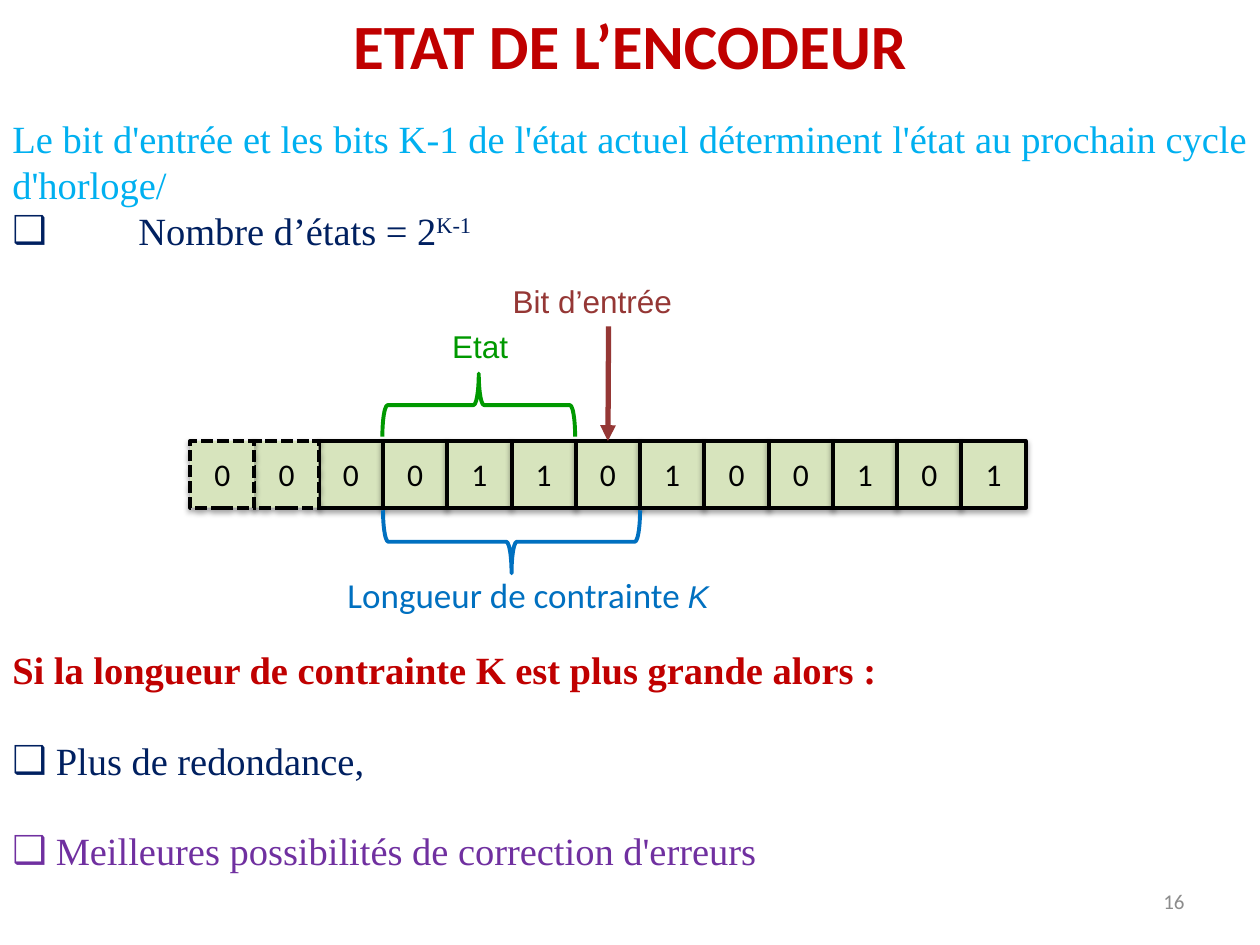
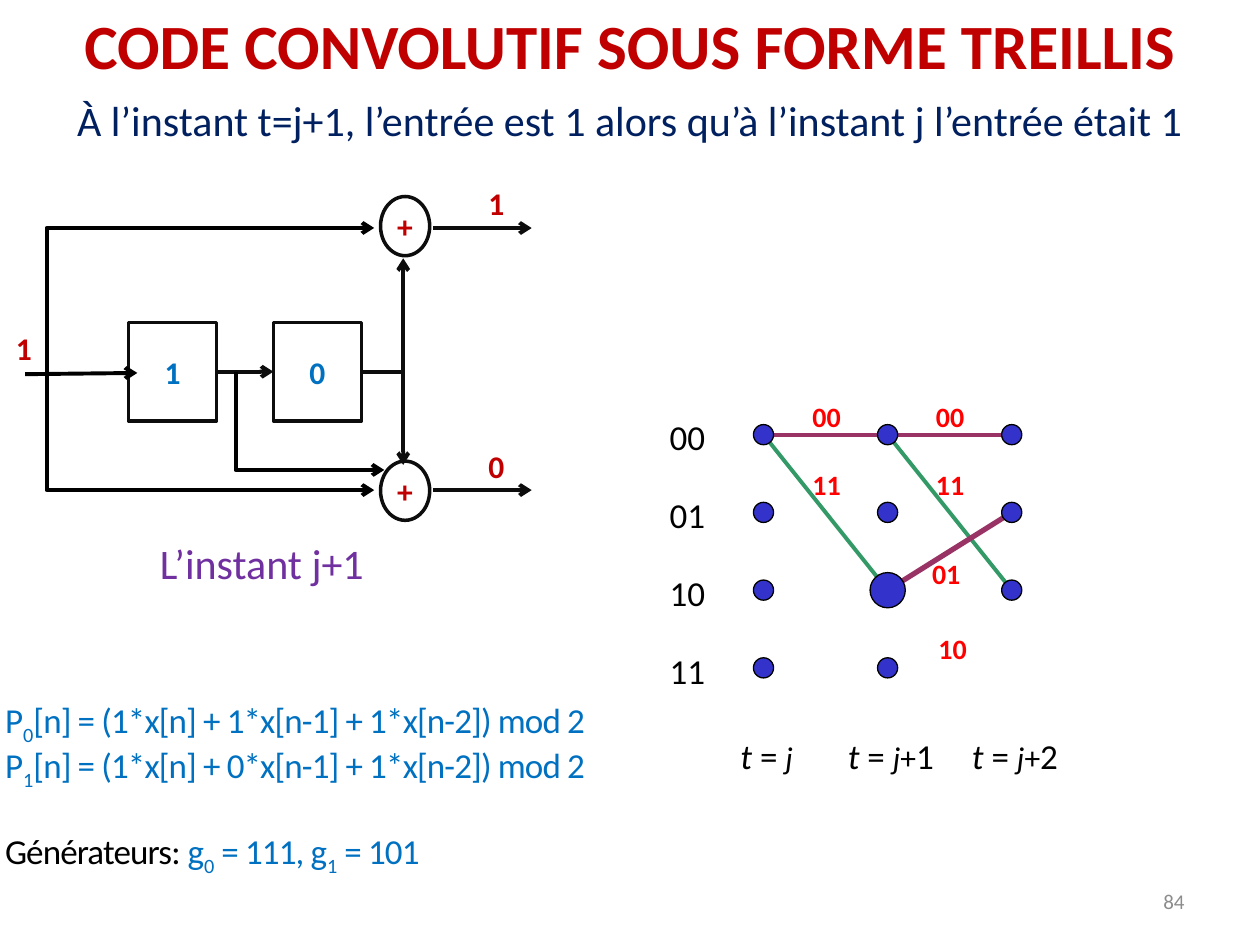
from lxml import etree
from pptx import Presentation
from pptx import util as u
from pptx.dml.color import RGBColor
from pptx.enum import dml, shapes, text
from pptx.oxml.ns import qn

COLUMNS, ROWS, UNIT = 100, 75, 0.1
RED, NAVY, BLUE, PURPLE = "C00000", "002060", "0070C0", "7030A0"
GREEN, BROWN, BLACK, INK = "009900", "953735", "000000", "0D0D0D"
PLUM, LEAF, DOT, TAG = "993366", "339966", "3333CC", "FF0000"

CALIBRI = {"name": "Calibri", "size": u.Pt(18), "color": BLACK}
ARIAL = {**CALIBRI, "name": "Arial"}
TIMES = {"name": "Times New Roman", "size": u.Pt(22), "color": NAVY}
LARGE = {**CALIBRI, "size": u.Pt(20)}
HEADING = {**CALIBRI, "size": u.Pt(24)}
STRONG = {**CALIBRI, "color": RED, "bold": True}
ITALIC = {"italic": True}
SMALL_ITALIC = {"italic": True, "size": u.Pt(18)}
SUBSCRIPT = {"baseline": "-25000"}

CENTER = {"alignment": text.PP_ALIGN.CENTER}
RIGHT = {"alignment": text.PP_ALIGN.RIGHT}
JUSTIFY = {"alignment": text.PP_ALIGN.JUSTIFY}
TIGHT = {f"margin_{side}": 0 for side in ("left", "right", "top", "bottom")}
MIDDLE = {"vertical_anchor": text.MSO_ANCHOR.MIDDLE}
UNWRAPPED = {"word_wrap": False}


def color(value):
    return RGBColor.from_string(value)


def grid(*lengths):
    return [u.Inches(length * UNIT) for length in lengths]


def assign(target, values):
    for name, value in values.items():
        setattr(target, name, value)


class Deck:
    def __init__(self):
        self.presentation = Presentation()
        self.presentation.slide_width, self.presentation.slide_height = grid(COLUMNS, ROWS)
        self.slide = None

    def start(self, title, number):
        self.slide = self.presentation.slides.add_slide(self.presentation.slide_layouts[6])
        self.text((0, 0, COLUMNS, 7.1), [([title], CENTER)], {**STRONG, "size": u.Pt(36)})
        self.text((71.7, 69.5, 23.3, 4), [([number], RIGHT)],
                  {**CALIBRI, "size": u.Pt(12), "color": "8C8C8C"}, MIDDLE)

    def style_run(self, run, style):
        for name, value in style.items():
            if name == "color":
                run.font.color.rgb = color(value)
            elif name in ("baseline", "spc"):
                run._r.get_or_add_rPr().set(name, value)
            else:
                setattr(run.font, name, value)

    def bullet(self, paragraph, indent):
        properties = paragraph._p.get_or_add_pPr()
        hang = u.Inches(indent * UNIT)
        properties.set("marL", str(hang))
        properties.set("indent", str(-hang))
        etree.SubElement(properties, qn("a:buFont"), typeface="Arial")
        etree.SubElement(properties, qn("a:buChar"), char="❑")

    def fill_frame(self, frame, paragraphs, style, frame_format):
        assign(frame, {"word_wrap": True, **frame_format})
        for index, (pieces, layout) in enumerate(paragraphs):
            paragraph = frame.paragraphs[0] if index == 0 else frame.add_paragraph()
            layout = dict(layout)
            indent = layout.pop("bullet", None)
            assign(paragraph, layout)
            if indent is not None:
                self.bullet(paragraph, indent)
            for piece in pieces:
                words, extra = (piece, {}) if isinstance(piece, str) else piece
                run = paragraph.add_run()
                run.text = words
                self.style_run(run, {**style, **extra})

    def text(self, place, paragraphs, style, frame_format=None):
        box = self.slide.shapes.add_textbox(*grid(*place))
        self.fill_frame(box.text_frame, paragraphs, style, frame_format or {})

    def label(self, place, pieces, style):
        self.text(place, [(pieces, CENTER)], style, TIGHT)

    def shape(self, kind, place, line, weight, fill=None, words=None, style=CALIBRI,
              dash=None, rotation=0, shadow=False):
        shape = self.slide.shapes.add_shape(kind, *grid(*place))
        shape.shadow.inherit = False
        shape.rotation = rotation
        if fill:
            shape.fill.solid()
            shape.fill.fore_color.rgb = color(fill)
        else:
            shape.fill.background()
        shape.line.color.rgb = color(line)
        assign(shape.line, {"width": u.Pt(weight), "dash_style": dash})
        if shadow:
            self.drop_shadow(shape)
        if words:
            self.fill_frame(shape.text_frame, [([words], CENTER)], style,
                            {**TIGHT, **MIDDLE, **UNWRAPPED})
        return shape

    def drop_shadow(self, shape):
        effects = shape._element.spPr.find(qn("a:effectLst"))
        outer = etree.SubElement(effects, qn("a:outerShdw"), blurRad="40000",
                                 dist="23000", dir="5400000", rotWithShape="0")
        tint = etree.SubElement(outer, qn("a:srgbClr"), val=BLACK)
        etree.SubElement(tint, qn("a:alpha"), val="35000")

    def line(self, start, end, line, weight=2.25, head=None, elbow=False,
             begin_at=None, end_at=None):
        kind = shapes.MSO_CONNECTOR.ELBOW if elbow else shapes.MSO_CONNECTOR.STRAIGHT
        connector = self.slide.shapes.add_connector(kind, *grid(*start, *end))
        if begin_at:
            connector.begin_connect(*begin_at)
        if end_at:
            connector.end_connect(*end_at)
        connector.line.color.rgb = color(line)
        connector.line.width = u.Pt(weight)
        properties = connector._element.spPr
        if head:
            etree.SubElement(properties.find(qn("a:ln")), qn("a:tailEnd"), type=head)
        if elbow:
            guides = properties.find(qn("a:prstGeom")).find(qn("a:avLst"))
            etree.SubElement(guides, qn("a:gd"), name="adj1", fmla="val 0")
        etree.SubElement(properties, qn("a:effectLst"))


def encoder_state(deck):
    deck.start("ETAT DE L’ENCODEUR", "16")
    deck.text((0, 8.6, COLUMNS, 12.1), [
        ([("Le bit d'entrée et les bits K-1 de l'état actuel déterminent "
           "l'état au prochain cycle d'horloge/", {"color": "00B0F0"})], JUSTIFY),
        (["Nombre d’états = 2", ("K-1", {"baseline": "30000"})], {**JUSTIFY, "bullet": 10}),
    ], TIMES)

    bits, left, top, width, height = "0000110100101", 15.1, 35, 5.1, 5.3
    padding = (1, 0)
    cells = {}
    for index in (*range(len(padding), len(bits)), *padding):
        cells[index] = deck.shape(
            shapes.MSO_SHAPE.RECTANGLE, (left + index * width, top, width, height),
            BLACK, 2.25, "D7E4BD", bits[index], shadow=True,
            dash=dml.MSO_LINE.SQUARE_DOT if index in padding else None)

    brace = shapes.MSO_SHAPE.RIGHT_BRACE
    deck.shape(brace, (35.5, 24.5, 5, 3 * width), GREEN, 2.25, rotation=270)
    deck.shape(brace, (38.1, 32.8, 5, 4 * width), BLUE, 2.25, rotation=90)
    deck.text((34.9, 25.5, 6.5, 4), [(["Etat"], {})], {**ARIAL, "color": GREEN}, UNWRAPPED)
    deck.text((26.6, 45, 31, 4.4),
              [(["Longueur de contrainte ", ("K", {**SMALL_ITALIC, "name": "Arial"})], {})],
              {**LARGE, "color": BLUE}, UNWRAPPED)
    deck.line((48.3, 25.9), (48.3, top), BROWN, 3, "triangle", end_at=(cells[6], 0))
    deck.text((39.7, 21.9, 17.2, 4), [(["Bit d’entrée"], {})], {**ARIAL, "color": BROWN})

    item = {"bullet": 3.45, "space_before": u.Pt(25.3)}
    deck.text((0, 50.8, COLUMNS, 19.5), [
        ([("Si la longueur de contrainte K est plus grande alors :",
           {"color": RED, "bold": True})], {}),
        (["Plus de redondance,"], item),
        ([("Meilleures possibilités de correction d'erreurs", {"color": PURPLE})], item),
    ], TIMES)


def trellis(deck):
    columns = [60.6 + 9.85 * step for step in range(3)]
    rows = [34.5 + 6.17 * step for step in range(4)]
    edges = [
        ((1, 0), (2, 2), LEAF, 2.25), ((1, 0), (2, 0), PLUM, 2.25),
        ((0, 0), (1, 2), LEAF, 2.25), ((0, 0), (1, 0), PLUM, 2.25),
        ((1, 2), (2, 1), PLUM, 3),
    ]
    for start, end, tint, weight in edges:
        deck.line(*((columns[column], rows[row]) for column, row in (start, end)), tint, weight)
    tags = [("11", 74, 37.1), ("00", 74, 31.7), ("11", 64.2, 37.1), ("00", 64.2, 31.7),
            ("01", 73.7, 44.2), ("10", 74.2, 50.1)]
    for words, left, top in tags:
        deck.label((left, top, 2.8, 2.7), [words], {**STRONG, "size": u.Pt(16), "color": TAG})

    current, missing = (1, 2), (2, 3)
    for column, x in enumerate(columns):
        for row, y in enumerate(rows):
            if (column, row) != missing:
                size = 2.8 if (column, row) == current else 1.6
                deck.shape(shapes.MSO_SHAPE.OVAL, (x - size / 2, y - size / 2, size, size),
                           BLACK, 0.75, DOT)
    for state, y in zip(("00", "01", "10", "11"), rows):
        deck.label((52.8, y - 1.5, 3.5, 3.3), [state], LARGE)
    for step, x in enumerate(columns):
        later = [("+", {"size": u.Pt(18)}), str(step)] if step else []
        deck.label((x - 3.5, 58.3, 7.5, 3.3),
                   [("t", ITALIC), " = ", ("j", SMALL_ITALIC), *later], LARGE)


def circuit(deck):
    value = {**STRONG, "color": BLUE}
    first, second = (
        deck.shape(shapes.MSO_SHAPE.RECTANGLE, (left, 25.6, 7, 7.8), INK, 2,
                   words=bit, style=value)
        for left, bit in ((10.2, "1"), (21.7, "0")))
    axis, fork, tap = 29.5, 32, 18.7
    adders = [(15.6, 18.1), (36.6, 38.9)]
    for top, output in adders:
        deck.shape(shapes.MSO_SHAPE.OVAL, (30.2, top, 3.9, 4.7), INK, 2,
                   words="+", style=STRONG)
        deck.line((34.4, output), (42.2, output), INK, head="arrow")
        deck.line((3.7, axis), (29.7, output), BLACK, head="arrow", elbow=True)
    deck.line((17.2, axis), (21.7, axis), INK, head="arrow",
              begin_at=(first, 3), end_at=(second, 1))
    deck.line((28.7, axis), (fork, axis), INK, begin_at=(second, 3))
    for tip in (20.5, 36.9):
        deck.line((fork, axis), (fork, tip), INK, head="arrow")
    deck.line((2, 29.7), (10.9, 29.6), BLACK, head="arrow")
    deck.line((tap, axis), (30.5, 37.3), BLACK, head="arrow", elbow=True)
    for bit, left, top in (("1", 0, 26.1), ("1", 37.5, 14.6), ("0", 37.5, 35.5)):
        deck.label((left, top, 3.8, 3), [bit], STRONG)
    deck.text((11.7, 42.2, 19.5, 5), [(["L’instant j+1"], {})], {**HEADING, "color": PURPLE})


def trellis_code(deck):
    deck.start("CODE CONVOLUTIF SOUS FORME TREILLIS", "84")
    deck.text((0, 7, COLUMNS, 5),
              [(["À l’instant t=j+1, l’entrée est 1 alors qu’à l’instant j l’entrée était 1"],
                CENTER)], {**HEADING, "color": NAVY})
    trellis(deck)
    circuit(deck)

    spacing = {"line_spacing": u.Pt(26)}
    parities = [
        (["P", (str(index), SUBSCRIPT), f"[n] = (1*x[n] + {tap}*x[n-1] + 1*x[n-2]) mod 2"],
         spacing)
        for index, tap in enumerate((1, 0))]
    generators = ["g", ("0", SUBSCRIPT), " = 111, g", ("1", SUBSCRIPT), " = 101"]
    deck.text((0, 55.2, 47.7, 16), [
        *parities,
        ([("Générateurs: ", {"color": BLACK}), *generators],
         {**spacing, "space_before": u.Pt(23)}),
    ], {**LARGE, "color": BLUE, "spc": "-50"}, {name: u.Inches(0.04) for name in TIGHT})


def main():
    deck = Deck()
    encoder_state(deck)
    trellis_code(deck)
    deck.presentation.save("out.pptx")


if __name__ == "__main__":
    main()
